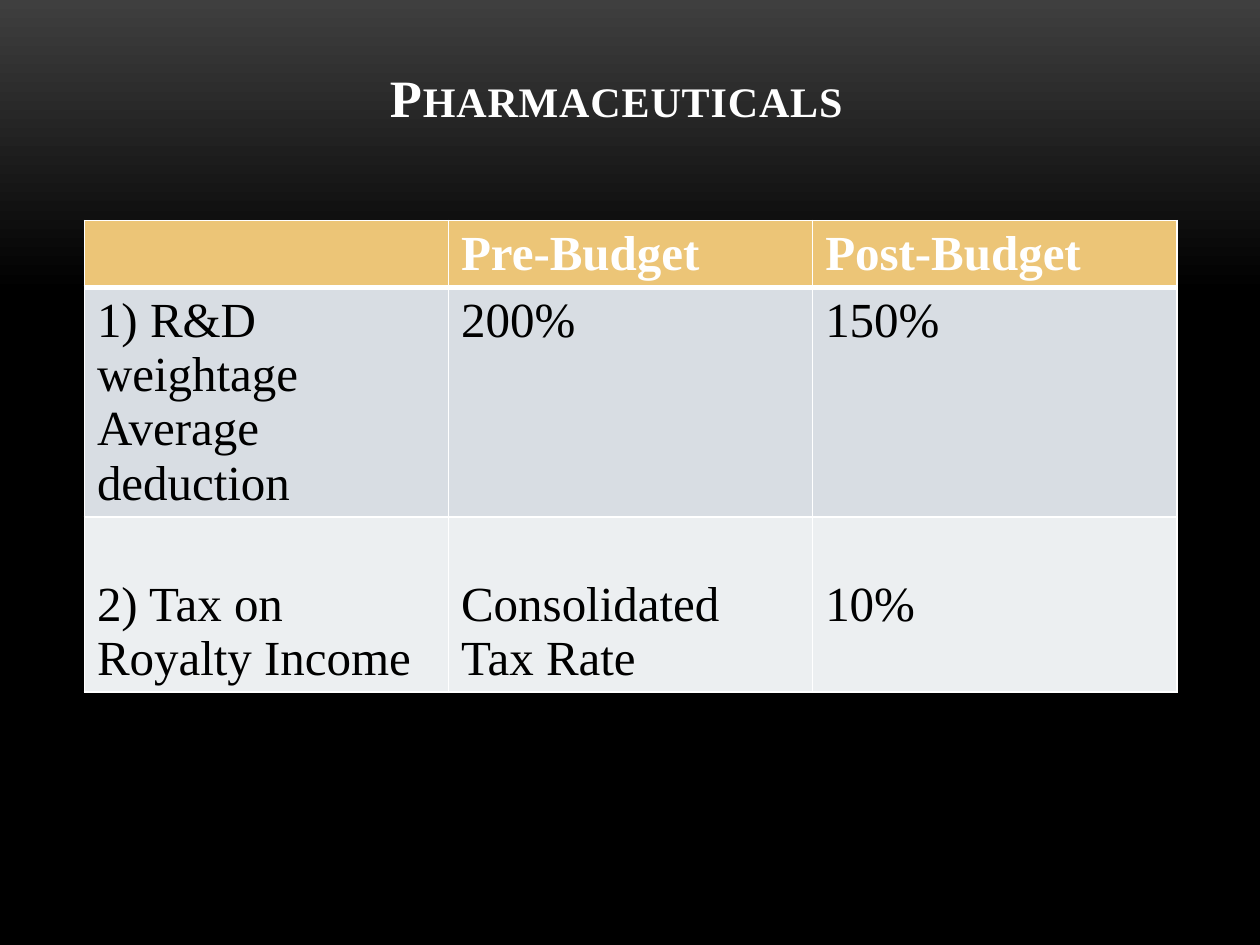
from lxml.etree import SubElement
from pptx import Presentation
from pptx.dml.color import RGBColor
from pptx.enum.text import MSO_ANCHOR, PP_ALIGN
from pptx.oxml.ns import qn
from pptx.util import Inches, Pt

WHITE = RGBColor(0xFF, 0xFF, 0xFF)
BLACK = RGBColor(0x00, 0x00, 0x00)
CHARCOAL = RGBColor(0x3F, 0x3F, 0x3F)
GOLD = RGBColor(0xEC, 0xC5, 0x77)
BLUE_GREY = RGBColor(0xD8, 0xDD, 0xE3)
PALE_GREY = RGBColor(0xEC, 0xEF, 0xF1)

LEFT, WIDTH = 0.67, 8.67
BUDGET_ROWS = [
    ["", "Pre-Budget", "Post-Budget"],
    ["1) R&D weightage\nAverage deduction", "200%", "150%"],
    ["2) Tax on Royalty Income", "Consolidated Tax Rate", "10%"],
]
ROW_HEIGHTS = [0.53, 1.81, 1.39]
ROW_FILLS = [GOLD, BLUE_GREY, PALE_GREY]
ROW_TOP_MARGINS = [0.05, 0.05, 0.48]


class SlideBuilder:
    """Holds the text style and the current slide."""

    font_name = "Times New Roman"

    def __init__(self, slide):
        self.slide = slide

    def background(self):
        fill = self.slide.background.fill
        fill.gradient()
        fill.gradient_angle = 270
        for stop, position, color in zip(fill.gradient_stops, (0, 0.31), (CHARCOAL, BLACK)):
            stop.position = position
            stop.color.rgb = color

    def style(self, text_frame, size, color, bold):
        for paragraph in text_frame.paragraphs:
            for run in paragraph.runs:
                run.font.name = self.font_name
                run.font.size = Pt(size)
                run.font.color.rgb = color
                run.font.bold = bold

    def title(self, text):
        heading = self.slide.shapes.title
        heading.left, heading.top = Inches(LEFT), Inches(0.3)
        heading.width, heading.height = Inches(WIDTH), Inches(1.25)
        frame = heading.text_frame
        frame.text = text
        frame.vertical_anchor = MSO_ANCHOR.BOTTOM
        frame.margin_bottom = Inches(0.53)
        frame.margin_right = Inches(0.22)
        paragraph = frame.paragraphs[0]
        paragraph.alignment = PP_ALIGN.CENTER
        self.style(frame, 30, WHITE, True)
        properties = paragraph.runs[0].font._element
        properties.set("cap", "small")
        properties.set("spc", "50")

    def borders(self, cell, top, bottom):
        properties = cell._tc.get_or_add_tcPr()
        for side, width in (("L", 1), ("R", 1), ("T", top), ("B", bottom)):
            line = SubElement(properties, qn(f"a:ln{side}"), w=str(Pt(width)))
            solid = SubElement(line, qn("a:solidFill"))
            SubElement(solid, qn("a:srgbClr"), val=str(WHITE))

    def table(self, rows, top):
        columns = len(rows[0])
        table = self.slide.shapes.add_table(
            len(rows), columns, Inches(LEFT), Inches(top),
            Inches(WIDTH), Inches(sum(ROW_HEIGHTS))).table
        table.horz_banding = False
        for column in table.columns:
            column.width = Inches(WIDTH / columns)
        for r, texts in enumerate(rows):
            table.rows[r].height = Inches(ROW_HEIGHTS[r])
            header = r == 0
            for c, text in enumerate(texts):
                cell = table.cell(r, c)
                self.borders(cell, 3 if r == 1 else 1, 3 if header else 1)
                cell.fill.solid()
                cell.fill.fore_color.rgb = ROW_FILLS[r]
                cell.margin_top = Inches(ROW_TOP_MARGINS[r])
                cell.text_frame.text = text
                self.style(cell.text_frame, 28, WHITE if header else BLACK, header)


def main():
    presentation = Presentation()
    presentation.slide_width, presentation.slide_height = Inches(10), Inches(7.5)
    builder = SlideBuilder(presentation.slides.add_slide(presentation.slide_layouts[5]))
    builder.background()
    builder.title("Pharmaceuticals")
    builder.table(BUDGET_ROWS, 1.75)
    presentation.save("out.pptx")


if __name__ == "__main__":
    main()
